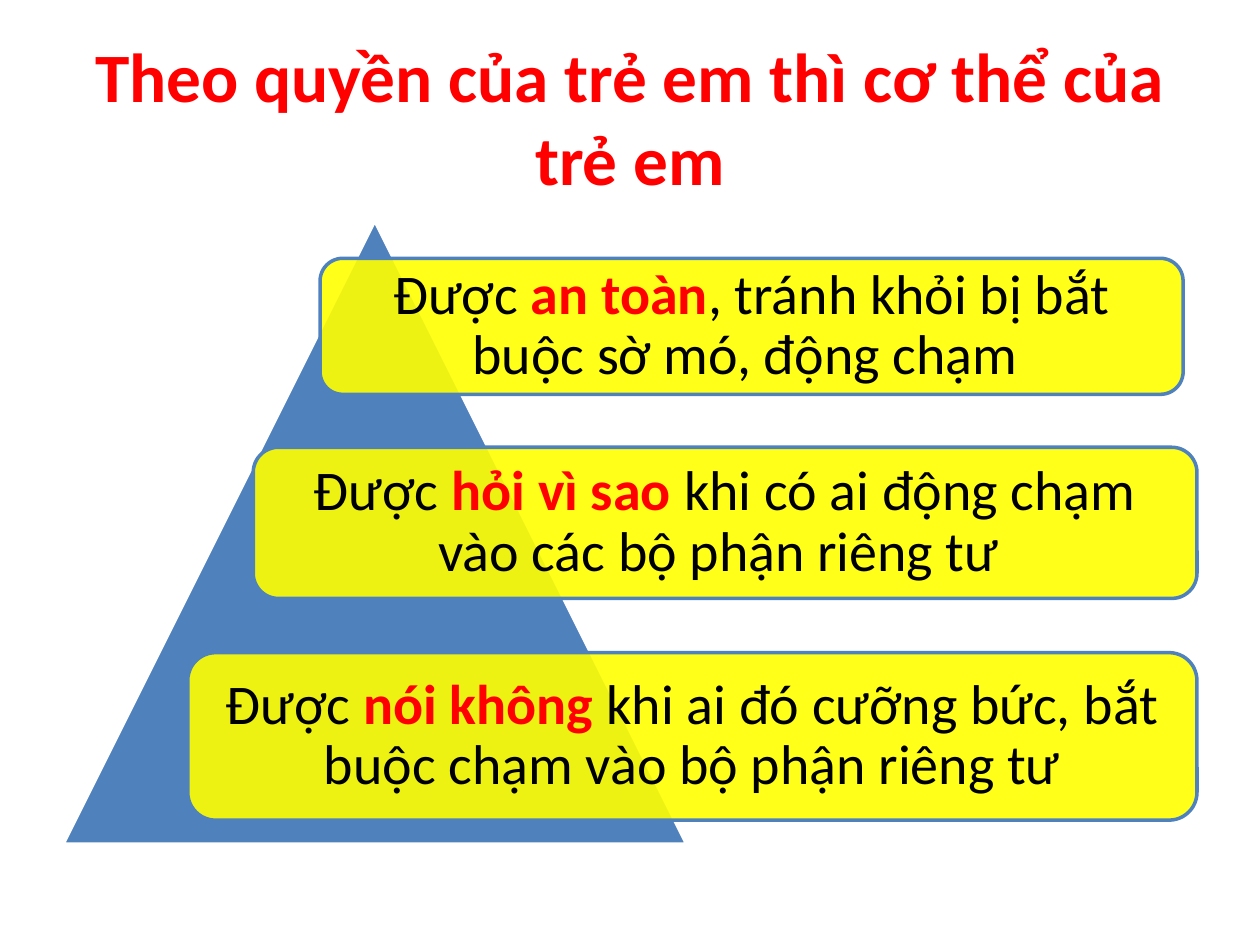
from dataclasses import dataclass

from lxml import etree
from pptx import Presentation
from pptx import util as u
from pptx.dml.color import RGBColor
from pptx.enum import shapes, text
from pptx.oxml import ns

COLORS = {"accent": "FF0000", "body": "000000", "pyramid": "4F81BD",
          "card": "FFFF00", "edge": "FFFFFF"}
FONT = "Calibri"
CELL = u.Inches(0.1)  # the slide is a grid of 100 columns by 75 rows
COLUMNS, ROWS = 100, 75


@dataclass
class Area:
    column: float
    row: float
    columns: float
    rows: float

    def lengths(self) -> list[int]:
        return [round(n * CELL) for n in (self.column, self.row, self.columns, self.rows)]


@dataclass
class Right:
    area: Area
    key_words: str
    rest: str


RIGHTS = [
    Right(Area(25.4, 20.5, 68.5, 10.8), "an toàn", ", tránh khỏi bị bắt buộc sờ mó, động chạm "),
    Right(Area(20.1, 35.5, 74.9, 12), "hỏi vì sao ", "khi có ai động chạm vào các bộ phận riêng tư "),
    Right(Area(14.9, 51.8, 80.1, 13.3), "nói không ",
          "khi ai đó cưỡng bức, bắt buộc chạm vào bộ phận riêng tư"),
]


def rgb(name: str) -> RGBColor:
    return RGBColor.from_string(COLORS[name])


def add_run(paragraph, words: str, size: float, color: str, bold: bool = False) -> None:
    run = paragraph.add_run()
    run.text = words
    run.font.name, run.font.size, run.font.bold = FONT, u.Pt(size), bold
    run.font.color.rgb = rgb(color)


def add_block(parent, kind, area: Area, fill: str, line: str):
    block = parent.add_shape(kind, *area.lengths())
    block.shadow.inherit = False
    block.fill.solid()
    block.fill.fore_color.rgb = rgb(fill)
    block.line.color.rgb = rgb(line)
    block.line.width = u.Pt(2)
    return block


def add_right(parent, right: Right) -> None:
    card = add_block(parent, shapes.MSO_SHAPE.ROUNDED_RECTANGLE, right.area, "card", "pyramid")
    # Let the pyramid show faintly through the card
    fill_color = card.fill._xPr.find(ns.qn("a:solidFill"))[0]
    etree.SubElement(fill_color, ns.qn("a:alpha"), val="90000")

    frame = card.text_frame
    frame.word_wrap = True
    frame.vertical_anchor = text.MSO_ANCHOR.MIDDLE
    frame.margin_left = frame.margin_right = u.Inches(0.13)
    frame.margin_top = frame.margin_bottom = u.Inches(0.13)
    sentence = frame.paragraphs[0]
    sentence.alignment = text.PP_ALIGN.CENTER
    sentence.line_spacing = 0.9
    add_run(sentence, "Được ", 32, "body")
    add_run(sentence, right.key_words, 32, "accent", bold=True)
    add_run(sentence, right.rest, 32, "body")


def main() -> None:
    deck = Presentation()
    deck.slide_width, deck.slide_height = COLUMNS * CELL, ROWS * CELL
    slide = deck.slides.add_slide(deck.slide_layouts[5])

    # Heading
    heading = slide.shapes.title
    heading.left, heading.top, heading.width, heading.height = Area(5, 3, 90, 12.5).lengths()
    frame = heading.text_frame
    frame.word_wrap = True
    frame.auto_size = text.MSO_AUTO_SIZE.NONE
    frame.vertical_anchor = text.MSO_ANCHOR.MIDDLE
    frame.paragraphs[0].alignment = text.PP_ALIGN.CENTER
    add_run(frame.paragraphs[0], "Theo quyền của trẻ em thì cơ thể của trẻ em",
            39.6, "accent", bold=True)

    # Pyramid with one card for each right
    pyramid = slide.shapes.add_group_shape().shapes
    add_block(pyramid, shapes.MSO_SHAPE.ISOSCELES_TRIANGLE,
              Area(5, 17.5, 49.5, 49.5), "pyramid", "edge")
    for right in RIGHTS:
        add_right(pyramid, right)

    deck.save("out.pptx")


if __name__ == "__main__":
    main()
